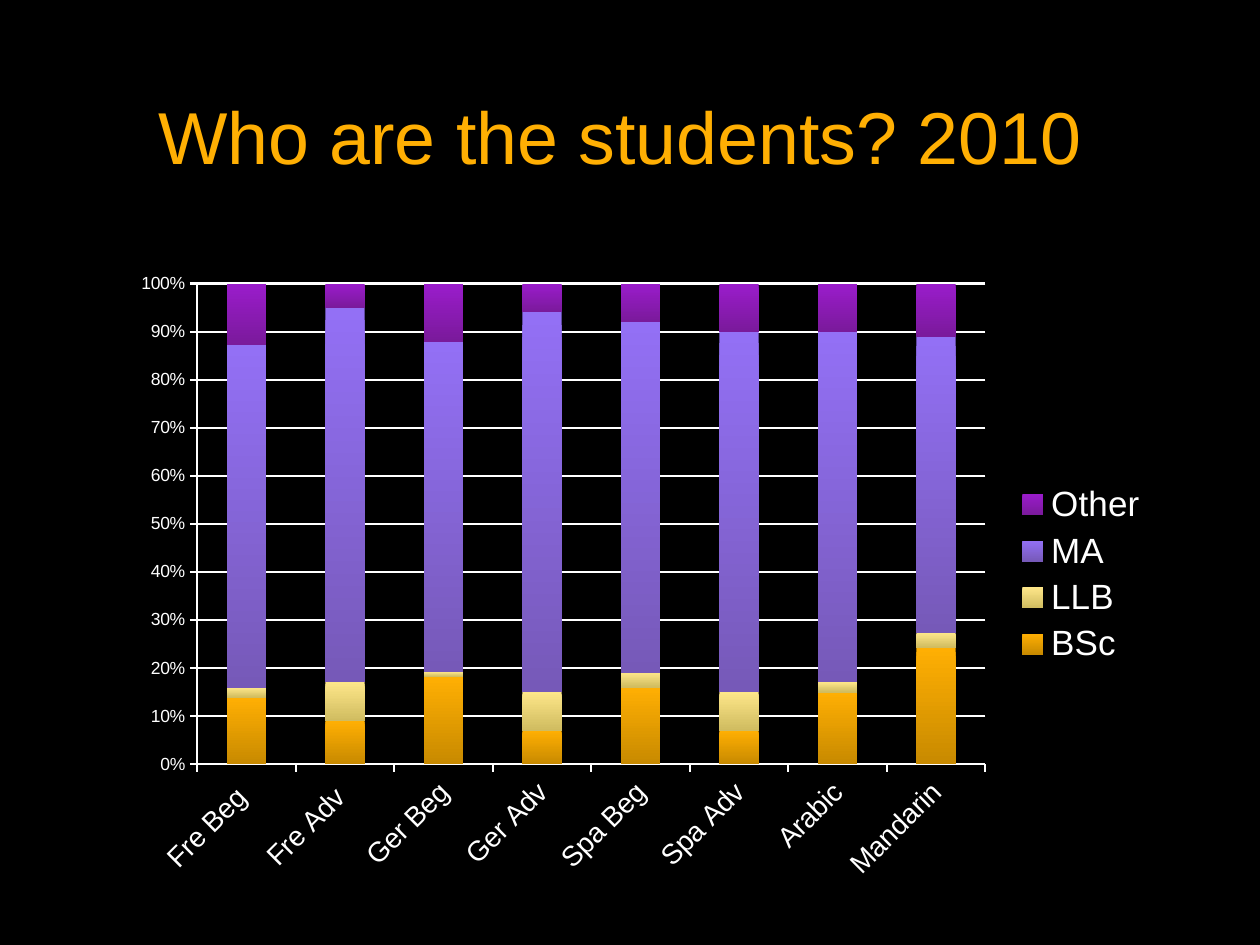
from lxml import etree
from pptx import Presentation
from pptx.chart.data import CategoryChartData as Data
from pptx.dml.color import RGBColor
from pptx.enum.chart import XL_CHART_TYPE as Kind, XL_LEGEND_POSITION as Side, XL_TICK_MARK as Tick
from pptx.enum.text import MSO_ANCHOR as Anchor, PP_ALIGN as Align
from pptx.oxml.ns import qn
from pptx.util import Inches, Pt

TITLE = "Who are the students? 2010 "
CATS = ["Fre Beg ", "Fre Adv ", "Ger Beg", "Ger Adv", "Spa Beg", "Spa Adv", "Arabic", "Mandarin"]
SERIES = [
    ("BSc", [14, 9, 18, 7, 16, 7, 15, 24], "FFAF03", "C88A00"),
    ("LLB", [2, 8, 1, 8, 3, 8, 2, 3], "FDE689", "D0BC60"),
    ("MA", [72, 78, 68, 79, 73, 75, 73, 61], "9370F5", "7659B8"),
    ("Other", [13, 5, 12, 6, 8, 10, 10, 11], "9A1CCB", "7A1A9B"),
]
PLOT = {"x": 0.07, "y": 0.04, "w": 0.76, "h": 0.76}
WHITE = "FFFFFF"


def color(code):
    return RGBColor.from_string(code)


def style(font, size, code=WHITE):
    font.name = "Arial"
    font.size = Pt(size)
    font.bold = False
    font.color.rgb = color(code)


def add_text(slide, text, box, size, code, align):
    frame = slide.shapes.add_textbox(*map(Inches, box)).text_frame
    frame.word_wrap = True
    frame.vertical_anchor = Anchor.MIDDLE
    para = frame.paragraphs[0]
    para.alignment = align
    run = para.add_run()
    run.text = text
    style(run.font, size, code)


def rule(line):
    line.color.rgb = color(WHITE)
    line.width = Pt(1.25)


def place_plot(chart):
    area = chart.plots[0]._element.getparent()
    for old in area.findall(qn("c:layout")):
        area.remove(old)
    layout = etree.Element(qn("c:layout"))
    area.insert(0, layout)
    manual = etree.SubElement(layout, qn("c:manualLayout"))
    parts = [("layoutTarget", "inner"), ("xMode", "edge"), ("yMode", "edge"), *PLOT.items()]
    for name, value in parts:
        etree.SubElement(manual, qn("c:" + name)).set("val", str(value))


def add_chart(slide, box):
    data = Data()
    data.categories = CATS
    for name, vals, *_ in SERIES:
        data.add_series(name, vals)
    chart = slide.shapes.add_chart(Kind.COLUMN_STACKED_100, *map(Inches, box), data).chart
    chart.has_title = False
    style(chart.font, 10)
    chart.has_legend = True
    legend = chart.legend
    legend.position = Side.RIGHT
    legend.include_in_layout = False
    style(legend.font, 20)

    for axis, size in ((chart.category_axis, 16), (chart.value_axis, 10)):
        axis.major_tick_mark = Tick.OUTSIDE
        axis.minor_tick_mark = Tick.NONE
        style(axis.tick_labels.font, size)
        rule(axis.format.line)
    labels = chart.category_axis.tick_labels.font._element.getparent().getparent().getparent()
    labels.find(qn("a:bodyPr")).set("rot", "-2700000")
    scale = chart.value_axis
    scale.minimum_scale, scale.maximum_scale, scale.major_unit = 0, 1, 0.1
    scale.has_major_gridlines = True
    rule(scale.major_gridlines.format.line)
    scale.tick_labels.number_format = "0%"
    scale.tick_labels.number_format_is_linked = False

    plot = chart.plots[0]
    plot.gap_width = 150
    plot.overlap = 100
    plot.vary_by_categories = False
    for bar, (_, _, *shades) in zip(plot.series, SERIES):
        fill = bar.format.fill
        fill.gradient()
        fill.gradient_angle = 270
        for stop, shade in zip(fill.gradient_stops, shades):
            stop.color.rgb = color(shade)
        bar.format.line.fill.background()
    place_plot(chart)


def main():
    deck = Presentation()
    deck.slide_width, deck.slide_height = Inches(10), Inches(7.5)
    slide = deck.slides.add_slide(deck.slide_layouts[6])
    back = slide.background.fill
    back.solid()
    back.fore_color.rgb = color("000000")
    add_text(slide, TITLE, (0.67, 0.64, 8.66, 0.86), size=42, code="FFAF03", align=Align.CENTER)
    add_chart(slide, (0.99, 2.05, 8.23, 5.02))
    deck.save("out.pptx")


if __name__ == "__main__":
    main()
